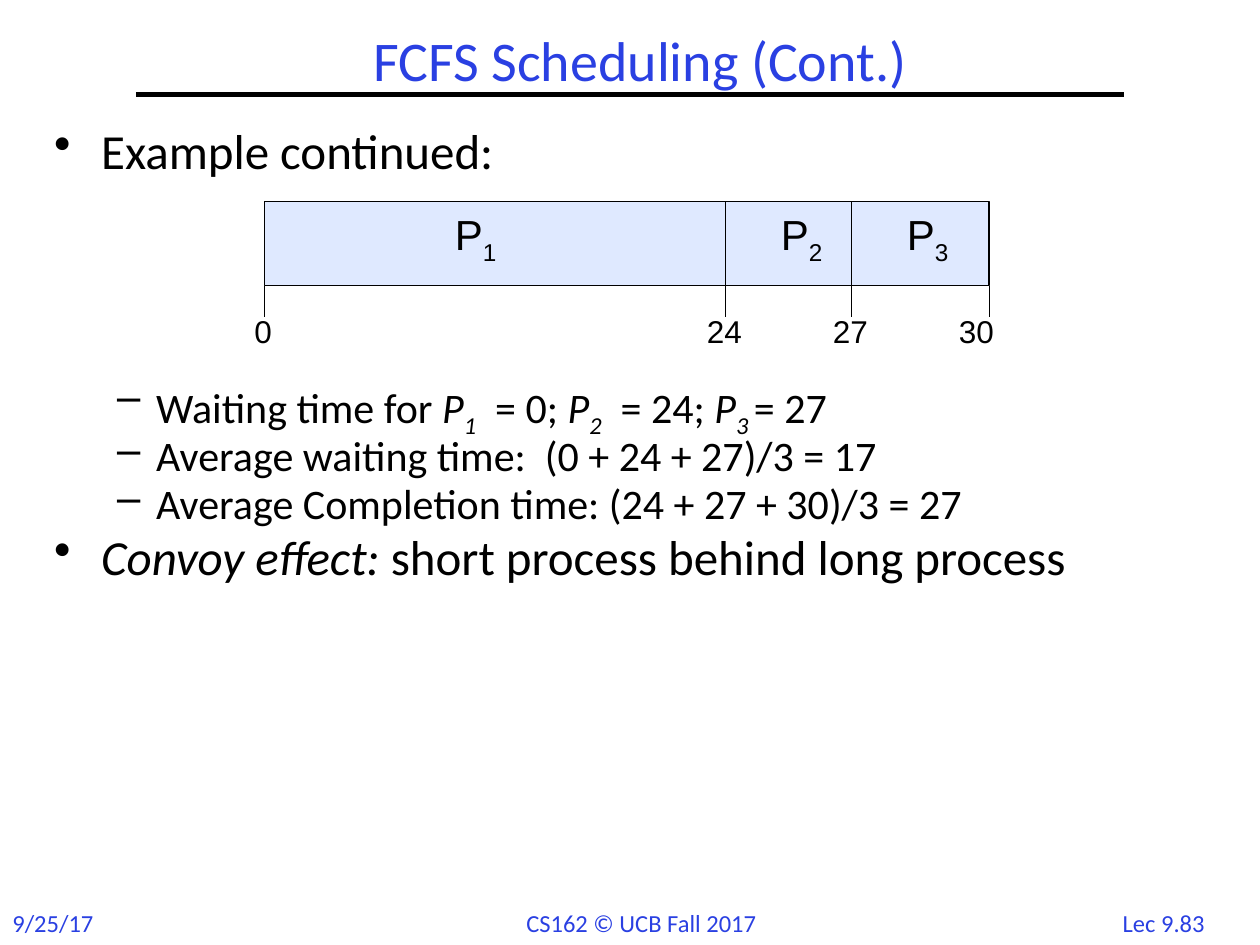
from lxml.etree import SubElement
from pptx import Presentation
from pptx.dml.color import RGBColor
from pptx.enum.shapes import MSO_CONNECTOR, MSO_SHAPE
from pptx.enum.text import MSO_ANCHOR, PP_ALIGN
from pptx.oxml.ns import qn
from pptx.util import Cm, Pt

COLORS = {"blue": "2A40E2", "black": "000000", "bar": "DFE9FF"}

deck = Presentation()
deck.slide_width, deck.slide_height = Cm(25.4), Cm(19.05)
page = deck.slides.add_slide(deck.slide_layouts[6])


def add_text(left, top, width, height, paragraphs, size, font="Calibri",
             color="black", align=PP_ALIGN.LEFT, anchor=MSO_ANCHOR.TOP, wrap=False):
    box = page.shapes.add_textbox(Cm(left), Cm(top), Cm(width), Cm(height))
    frame = box.text_frame
    frame.word_wrap = wrap
    frame.vertical_anchor = anchor
    for index, spans in enumerate(paragraphs):
        para = frame.paragraphs[0] if index == 0 else frame.add_paragraph()
        para.alignment = align
        para.font.size = Pt(size)
        para.font.name = font
        para.font.color.rgb = RGBColor.from_string(COLORS[color])
        for text, style in spans:
            span = para.add_run()
            span.text = text
            if "i" in style:
                span.font.italic = True
            if "s" in style:
                span._r.get_or_add_rPr().set("baseline", "-25000")
    return frame


def add_line(start_x, start_y, end_x, end_y, weight):
    line = page.shapes.add_connector(
        MSO_CONNECTOR.STRAIGHT, Cm(start_x), Cm(start_y), Cm(end_x), Cm(end_y))
    line.line.color.rgb = RGBColor.from_string(COLORS["black"])
    line.line.width = Pt(weight)
    SubElement(line._element.spPr, qn("a:effectLst"))


footers = [
    (22.28, 2.36, "Lec 9.83", PP_ALIGN.CENTER),
    (0, 2.4, "9/25/17", PP_ALIGN.LEFT),
    (10.36, 5.44, "CS162 © UCB Fall 2017", PP_ALIGN.LEFT),
]
for left, width, text, align in footers:
    add_text(left, 18.19, width, 0.85, [[(text, "")]], 14, color="blue", align=align)

add_line(2.74, 1.9, 22.66, 1.9, 3)
title = add_text(0.84, 0.64, 24.13, 1.27, [[("FCFS Scheduling (Cont.)", "")]], 32,
                 color="blue", align=PP_ALIGN.CENTER, anchor=MSO_ANCHOR.MIDDLE, wrap=True)
title.paragraphs[0].line_spacing = 0.9

waiting = [
    ("Waiting time for ", ""), ("P", "i"), ("1", "is"), ("  = 0; ", ""),
    ("P", "i"), ("2", "is"), ("  = 24; ", ""), ("P", "i"), ("3 ", "is"), ("= 27", ""),
]
body_paragraphs = [
    [("Example continued:", "")],
    waiting,
    [("Average waiting time:  (0 + 24 + 27)/3 = 17", "")],
    [("Average Completion time: (24 + 27 + 30)/3 = 27", "")],
    [("Convoy effect:", "i"), (" short process behind long process", "")],
]
body = add_text(0.84, 2.54, 24.13, 16.5, body_paragraphs, 28, wrap=True)
body_rules = [(0, 0.8, 5.6), (1, 0.6, 124), (1, 0.8, 4.8), (1, 0.8, 4.8), (0, 0.8, 5.6)]
level_rules = [(28, 0.95, 0.95, "•"), (24, 2.06, 0.79, "–")]
for para, (level, spacing, before) in zip(body.paragraphs, body_rules):
    size, margin, hanging, bullet = level_rules[level]
    para.level = level
    para.font.size = Pt(size)
    para.line_spacing = spacing
    para.space_before = Pt(before)
    properties = para._p.get_or_add_pPr()
    properties.set("marL", str(Cm(margin)))
    properties.set("indent", str(-Cm(hanging)))
    mark = properties.makeelement(qn("a:buChar"), {"char": bullet})
    properties.find(qn("a:defRPr")).addprevious(mark)

bar_left, bar_top, bar_right, bar_bottom, tick_bottom = 5.33, 4.06, 19.94, 5.76, 6.4
bar = page.shapes.add_shape(MSO_SHAPE.RECTANGLE, Cm(bar_left), Cm(bar_top),
                            Cm(bar_right - bar_left), Cm(bar_bottom - bar_top))
bar.shadow.inherit = False
bar.fill.solid()
bar.fill.fore_color.rgb = RGBColor.from_string(COLORS["bar"])
bar.line.color.rgb = RGBColor.from_string(COLORS["black"])
bar.line.width = Pt(0.75)

for number, left in enumerate([8.92, 15.49, 18.03], 1):
    add_text(left, 4.14, 1.4, 1.3, [[("P", ""), (str(number), "s")]], 24,
             font="Arial", anchor=MSO_ANCHOR.MIDDLE)

dividers = [14.63, 17.17]
for divider in dividers:
    add_line(divider, bar_top, divider, bar_bottom, 0.75)

times = [("0", bar_left, 4.88, 0.86), ("24", dividers[0], 14, 1.22),
         ("27", dividers[1], 16.54, 1.22), ("30", bar_right, 19.08, 1.22)]
for text, tick, left, width in times:
    add_line(tick, bar_bottom, tick, tick_bottom, 0.75)
    add_text(left, 6.17, width, 1.02, [[(text, "")]], 18,
             font="Arial", anchor=MSO_ANCHOR.MIDDLE)

deck.save("out.pptx")
